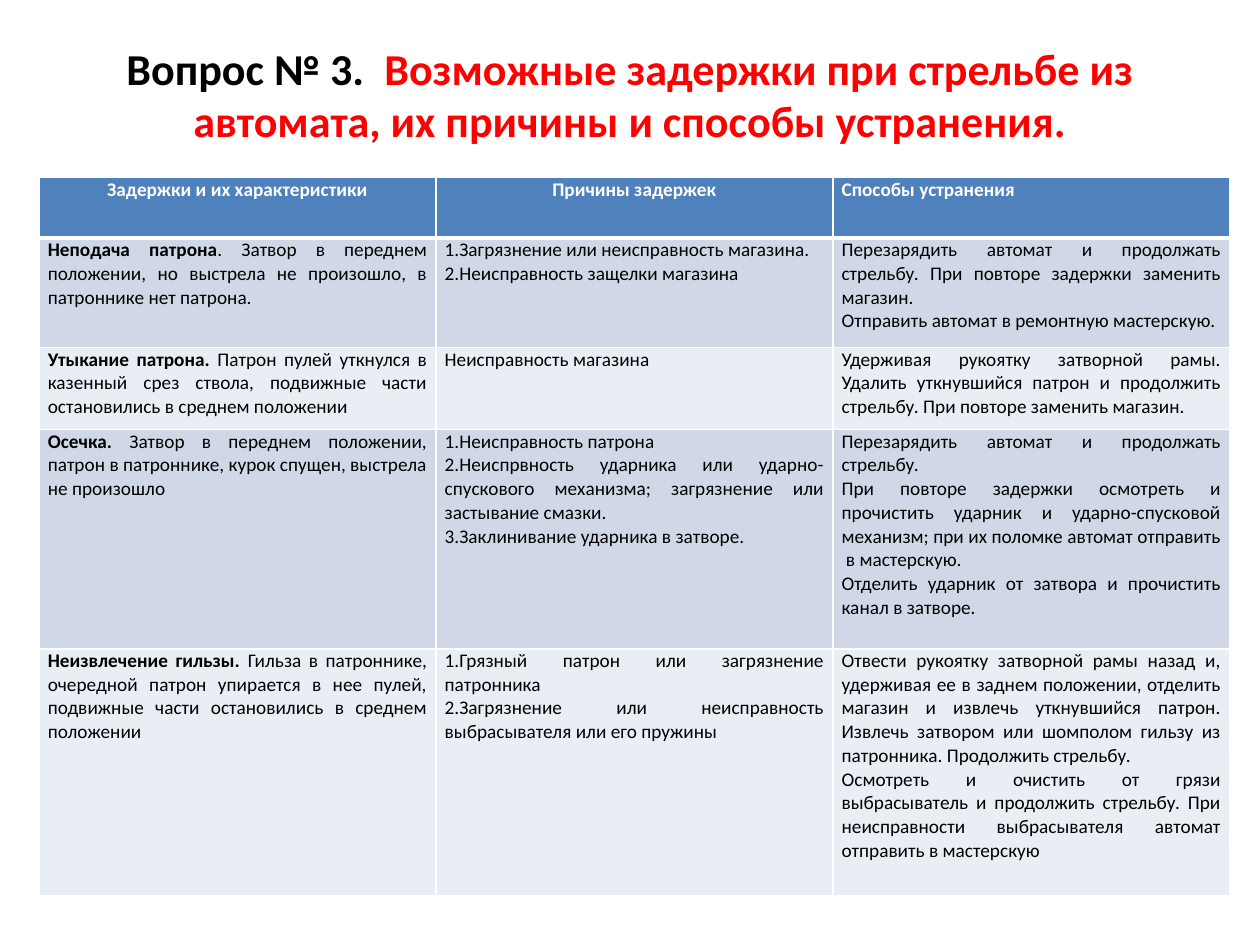
from lxml import etree
from pptx import Presentation
from pptx.dml.color import RGBColor
from pptx.enum import text
from pptx.oxml import ns
from pptx.util import Inches, Pt

COLORS = {
    "title": "000000",
    "topic": "FF0000",
    "body": "000000",
    "header_text": "FFFFFF",
    "header": "4F81BD",
    "odd_row": "D0D8E8",
    "even_row": "E9EDF4",
    "border": "FFFFFF",
}
FONT = "Calibri"
ALIGN = text.PP_ALIGN

COLUMN_WIDTH = 3.15
ROW_HEIGHTS = [0.48, 0.87, 0.65, 1.74, 1.96]
HEADERS = [
    ("Задержки и их характеристики", ALIGN.CENTER),
    ("Причины задержек", ALIGN.CENTER),
    ("Способы устранения", ALIGN.JUSTIFY),
]
# Each stoppage: name, description, causes, remedies
STOPPAGES = [
    (
        "Неподача патрона",
        ". Затвор в переднем положении, но выстрела не произошло, в патроннике нет патрона.",
        ["1.Загрязнение или неисправность магазина.",
         "2.Неисправность защелки магазина"],
        ["Перезарядить автомат и продолжать стрельбу. При повторе задержки заменить магазин.",
         "Отправить автомат в ремонтную мастерскую."],
    ),
    (
        "Утыкание патрона. ",
        "Патрон пулей уткнулся в казенный срез ствола, подвижные части остановились "
        "в среднем положении",
        ["Неисправность магазина"],
        ["Удерживая рукоятку затворной рамы. Удалить уткнувшийся патрон и продолжить "
         "стрельбу. При повторе заменить магазин."],
    ),
    (
        "Осечка. ",
        "Затвор в переднем положении, патрон в патроннике, курок спущен, выстрела не произошло",
        ["1.Неисправность патрона ",
         "2.Неиспрвность ударника или ударно-спускового механизма; загрязнение или "
         "застывание смазки.",
         "3.Заклинивание ударника в затворе."],
        ["Перезарядить автомат и продолжать стрельбу.",
         "При повторе задержки осмотреть и прочистить ударник и ударно-спусковой механизм; "
         "при их поломке автомат отправить  в мастерскую.",
         "Отделить ударник от затвора и прочистить канал в затворе."],
    ),
    (
        "Неизвлечение гильзы. ",
        "Гильза в патроннике, очередной патрон упирается в нее пулей, подвижные части "
        "остановились в среднем положении",
        ["1.Грязный патрон или загрязнение патронника",
         "2.Загрязнение или неисправность выбрасывателя или его пружины"],
        ["Отвести рукоятку затворной рамы назад и, удерживая ее в заднем положении, отделить "
         "магазин и извлечь уткнувшийся патрон. Извлечь затвором или шомполом гильзу из "
         "патронника. Продолжить стрельбу.",
         "Осмотреть и очистить от грязи выбрасыватель и продолжить стрельбу. При неисправности "
         "выбрасывателя автомат отправить в мастерскую"],
    ),
]


def rgb(name):
    return RGBColor.from_string(COLORS[name])


def add_run(paragraph, wording, size, color, bold=False):
    run = paragraph.add_run()
    run.text = wording
    run.font.name = FONT
    run.font.size = Pt(size)
    run.font.bold = bold
    run.font.color.rgb = rgb(color)


def add_title(slide):
    title = slide.shapes.add_textbox(Inches(0.5), Inches(0.3), Inches(9), Inches(1.25))
    frame = title.text_frame
    frame.word_wrap = True
    frame.vertical_anchor = text.MSO_ANCHOR.MIDDLE
    frame.margin_bottom = Inches(0.41)
    heading = frame.paragraphs[0]
    heading.alignment = ALIGN.CENTER
    add_run(heading, "Вопрос № 3.  ", 25.2, "title", True)
    add_run(heading, "Возможные задержки при стрельбе из автомата, "
            "их причины и способы устранения.", 25.2, "topic", True)


def set_borders(cell, widths):
    """Draw the cell's borders; widths maps L, R, T, B to points."""
    properties = cell._tc.get_or_add_tcPr()
    for side, width in widths.items():
        line = etree.SubElement(properties, ns.qn(f"a:ln{side}"), w=str(Pt(width)))
        fill = etree.SubElement(line, ns.qn("a:solidFill"))
        etree.SubElement(fill, ns.qn("a:srgbClr"), val=COLORS["border"])


def fill_cell(cell, paragraphs, fill, color, borders, align=ALIGN.JUSTIFY):
    """Write paragraphs, each a list of (wording, bold) runs, into a cell."""
    set_borders(cell, borders)
    cell.fill.solid()
    cell.fill.fore_color.rgb = rgb(fill)
    cell.margin_left = cell.margin_right = Inches(0.07)
    cell.margin_top = cell.margin_bottom = 0
    frame = cell.text_frame
    for index, runs in enumerate(paragraphs):
        paragraph = frame.add_paragraph() if index else frame.paragraphs[0]
        paragraph.alignment = align
        for wording, bold in runs:
            add_run(paragraph, wording, 11, color, bold)


def add_stoppage_table(slide):
    table = slide.shapes.add_table(
        len(ROW_HEIGHTS), len(HEADERS), Inches(0.31), Inches(1.41),
        Inches(COLUMN_WIDTH * len(HEADERS)), Inches(sum(ROW_HEIGHTS))).table
    for column in table.columns:
        column.width = Inches(COLUMN_WIDTH)
    for row, height in zip(table.rows, ROW_HEIGHTS):
        row.height = Inches(height)

    header_borders = {"L": 1, "R": 1, "T": 1, "B": 3}
    for column, (heading, align) in enumerate(HEADERS):
        fill_cell(table.cell(0, column), [[(heading, True)]], "header",
                  "header_text", header_borders, align)

    for row, (name, description, causes, remedies) in enumerate(STOPPAGES, 1):
        fill = "odd_row" if row % 2 else "even_row"
        borders = {"L": 1, "R": 1, "T": 3 if row == 1 else 1, "B": 1}
        contents = [[[(name, True), (description, False)]]]
        contents += [[[(item, False)] for item in items] for items in (causes, remedies)]
        for column, paragraphs in enumerate(contents):
            fill_cell(table.cell(row, column), paragraphs, fill, "body", borders)


def main():
    presentation = Presentation()
    presentation.slide_width = Inches(10)
    presentation.slide_height = Inches(7.5)
    slide = presentation.slides.add_slide(presentation.slide_layouts[6])
    add_title(slide)
    add_stoppage_table(slide)
    presentation.save("out.pptx")


if __name__ == "__main__":
    main()
